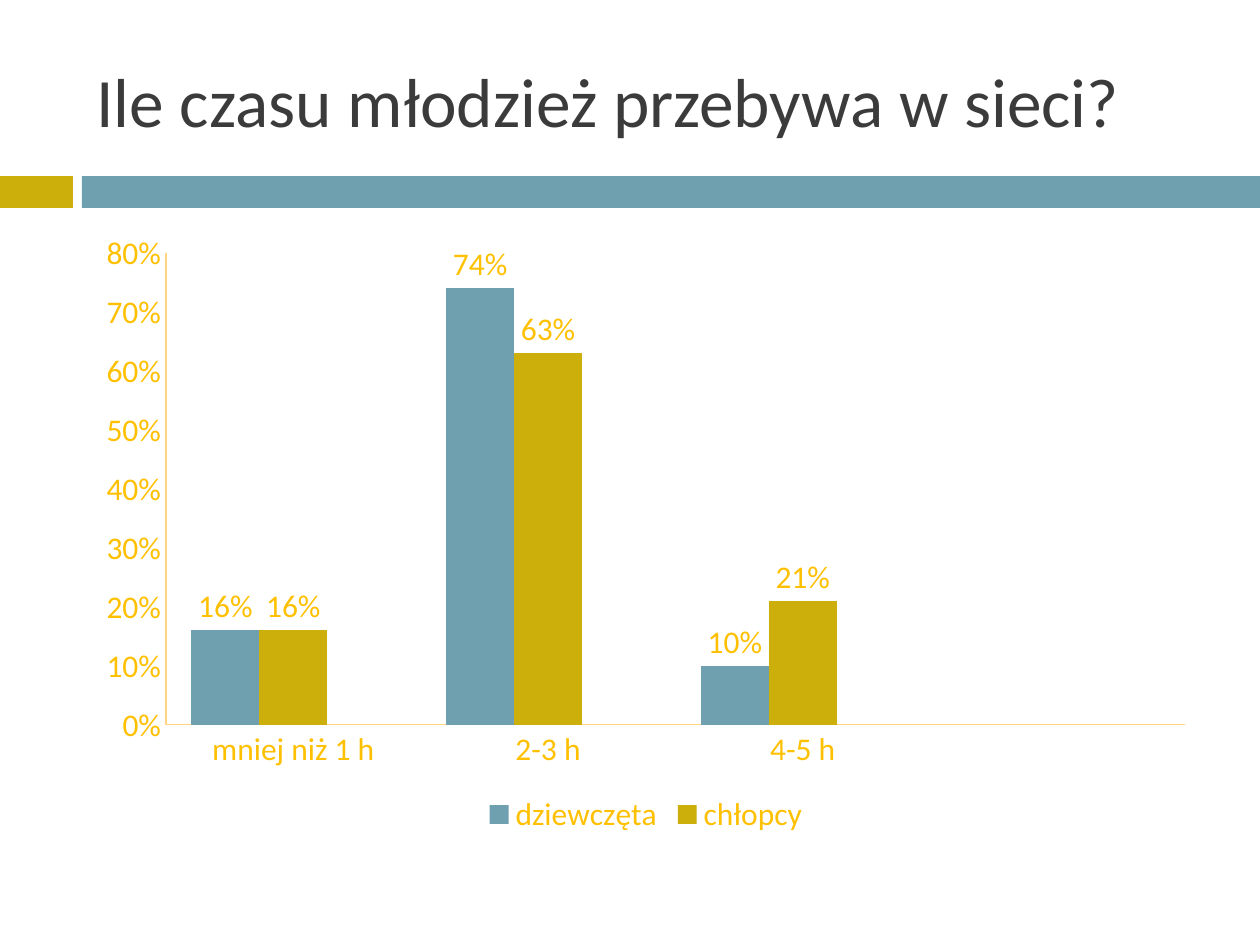
"""Build a slide with a clustered column chart of time young people spend online."""
from dataclasses import dataclass

from lxml import etree
from pptx import Presentation
from pptx import util as u
from pptx.chart.data import CategoryChartData
from pptx.dml.color import RGBColor
from pptx.enum import chart as charts, shapes, text
from pptx.oxml.ns import qn

PX = u.Inches(1) // 126


@dataclass(frozen=True)
class Theme:
    font: str = "Calibri"
    title: str = "3B3B3B"
    label: str = "FFC000"
    axis: str = "FFD580"
    teal: str = "6EA0B0"
    gold: str = "CCAF0A"
    violet: str = "8D89A4"
    title_pt: float = 39.6
    label_pt: float = 18


@dataclass(frozen=True)
class Box:
    x: int
    y: int
    w: int
    h: int

    def emu(self) -> tuple[int, ...]:
        return tuple(v * PX for v in (self.x, self.y, self.w, self.h))


@dataclass(frozen=True)
class Band:
    box: Box
    color: str


@dataclass(frozen=True)
class Series:
    name: str
    values: tuple
    color: str


THEME = Theme()
TITLE_BOX = Box(84, 32, 1124, 136)
CHART_BOX = Box(84, 220, 1124, 620)
PLOT_BOX = Box(166, 253, 1019, 472)
BANDS = (
    Band(Box(0, 176, 73, 32), THEME.gold),
    Band(Box(82, 176, 1178, 32), THEME.teal),
)
CATEGORIES = ("mniej niż 1 h", "2-3 h", "4-5 h", "")
SERIES = (
    Series("dziewczęta", (0.16, 0.74, 0.1, None), THEME.teal),
    Series("chłopcy", (0.16, 0.63, 0.21, None), THEME.gold),
    Series("Series 3", (None,) * 4, THEME.violet),
)


def set_font(font, *, size: float, color: str) -> None:
    font.name = THEME.font
    font.size = u.Pt(size)
    font.color.rgb = RGBColor.from_string(color)


def write(tf, content: str, *, size: float, color: str, align, anchor) -> None:
    tf.word_wrap = True
    tf.auto_size = text.MSO_AUTO_SIZE.NONE
    tf.vertical_anchor = anchor
    p = tf.paragraphs[0]
    p.alignment = align
    r = p.add_run()
    r.text = content
    set_font(r.font, size=size, color=color)


def add_band(slide, band: Band) -> None:
    sp = slide.shapes.add_shape(shapes.MSO_SHAPE.RECTANGLE, *band.box.emu())
    sp.shadow.inherit = False
    sp.fill.solid()
    sp.fill.fore_color.rgb = RGBColor.from_string(band.color)
    sp.line.fill.background()


def add_title(slide, content: str) -> None:
    sp = slide.shapes.title
    sp.left, sp.top, sp.width, sp.height = TITLE_BOX.emu()
    write(sp.text_frame, content, size=THEME.title_pt, color=THEME.title,
          align=text.PP_ALIGN.LEFT, anchor=text.MSO_ANCHOR.MIDDLE)


def place_plot(chart, plot: Box, frame: Box) -> None:
    area = chart.plots[0]._element.getparent()
    for old in area.findall(qn("c:layout")):
        area.remove(old)
    layout = etree.Element(qn("c:layout"))
    manual = etree.SubElement(layout, qn("c:manualLayout"))
    settings = {
        "layoutTarget": "inner", "xMode": "edge", "yMode": "edge",
        "x": (plot.x - frame.x) / frame.w, "y": (plot.y - frame.y) / frame.h,
        "w": plot.w / frame.w, "h": plot.h / frame.h,
    }
    for tag, value in settings.items():
        etree.SubElement(manual, qn(f"c:{tag}")).set("val", str(value))
    area.insert(0, layout)


def hide_legend_entry(legend, index: int) -> None:
    entry = etree.Element(qn("c:legendEntry"))
    for tag, value in (("idx", index), ("delete", 1)):
        etree.SubElement(entry, qn(f"c:{tag}")).set("val", str(value))
    legend._element.find(qn("c:legendPos")).addnext(entry)


def style_axis(axis) -> None:
    axis.has_major_gridlines = False
    axis.major_tick_mark = charts.XL_TICK_MARK.NONE
    axis.minor_tick_mark = charts.XL_TICK_MARK.NONE
    axis.format.line.color.rgb = RGBColor.from_string(THEME.axis)
    axis.format.line.width = u.Pt(0.75)


def style_series(ser, color: str) -> None:
    ser.invert_if_negative = False
    ser.format.fill.solid()
    ser.format.fill.fore_color.rgb = RGBColor.from_string(color)
    labels = ser.data_labels
    labels.show_value = True
    labels.number_format = "0%"
    labels.number_format_is_linked = False
    labels.position = charts.XL_LABEL_POSITION.OUTSIDE_END
    set_font(labels.font, size=THEME.label_pt, color=THEME.label)


def add_time_chart(slide) -> None:
    data = CategoryChartData(number_format="0%")
    data.categories = CATEGORIES
    for series in SERIES:
        data.add_series(series.name, series.values)
    chart = slide.shapes.add_chart(
        charts.XL_CHART_TYPE.COLUMN_CLUSTERED, *CHART_BOX.emu(), data).chart
    chart.has_title = False
    set_font(chart.font, size=THEME.label_pt, color=THEME.label)
    plot = chart.plots[0]
    plot.gap_width = 75
    plot.overlap = 0
    plot.vary_by_categories = False
    for ser, series in zip(plot.series, SERIES):
        style_series(ser, series.color)
    for axis in (chart.category_axis, chart.value_axis):
        style_axis(axis)
    values = chart.value_axis
    values.minimum_scale, values.maximum_scale, values.major_unit = 0, 0.8, 0.1
    values.tick_labels.number_format = "0%"
    values.tick_labels.number_format_is_linked = False
    chart.has_legend = True
    chart.legend.position = charts.XL_LEGEND_POSITION.BOTTOM
    chart.legend.include_in_layout = False
    hide_legend_entry(chart.legend, len(SERIES) - 1)
    place_plot(chart, PLOT_BOX, CHART_BOX)


def main() -> None:
    prs = Presentation()
    prs.slide_width, prs.slide_height = u.Inches(10), u.Inches(7.5)
    slide = prs.slides.add_slide(prs.slide_layouts[5])
    for band in BANDS:
        add_band(slide, band)
    add_title(slide, "Ile czasu młodzież przebywa w sieci?")
    add_time_chart(slide)
    prs.save("out.pptx")


if __name__ == "__main__":
    main()
